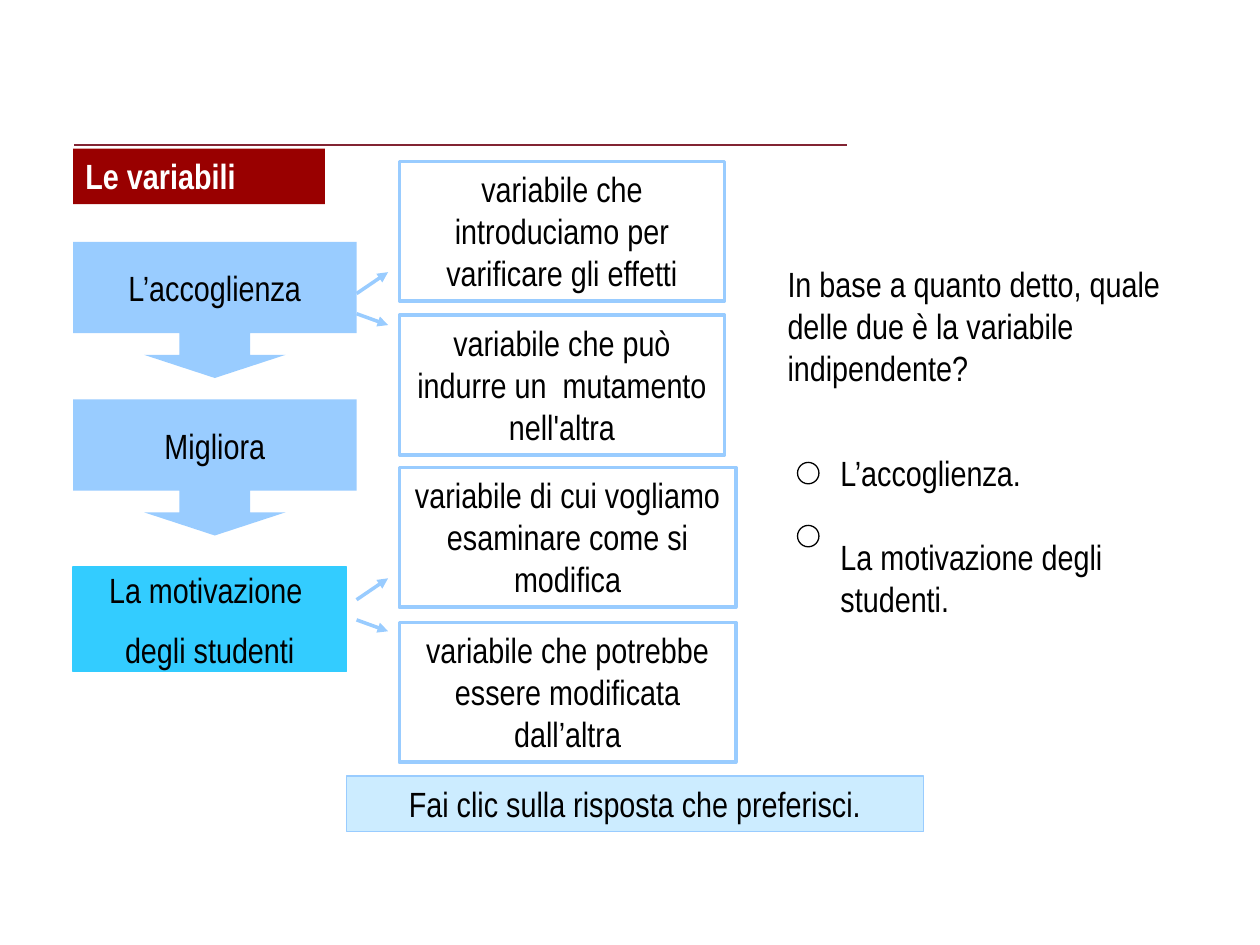
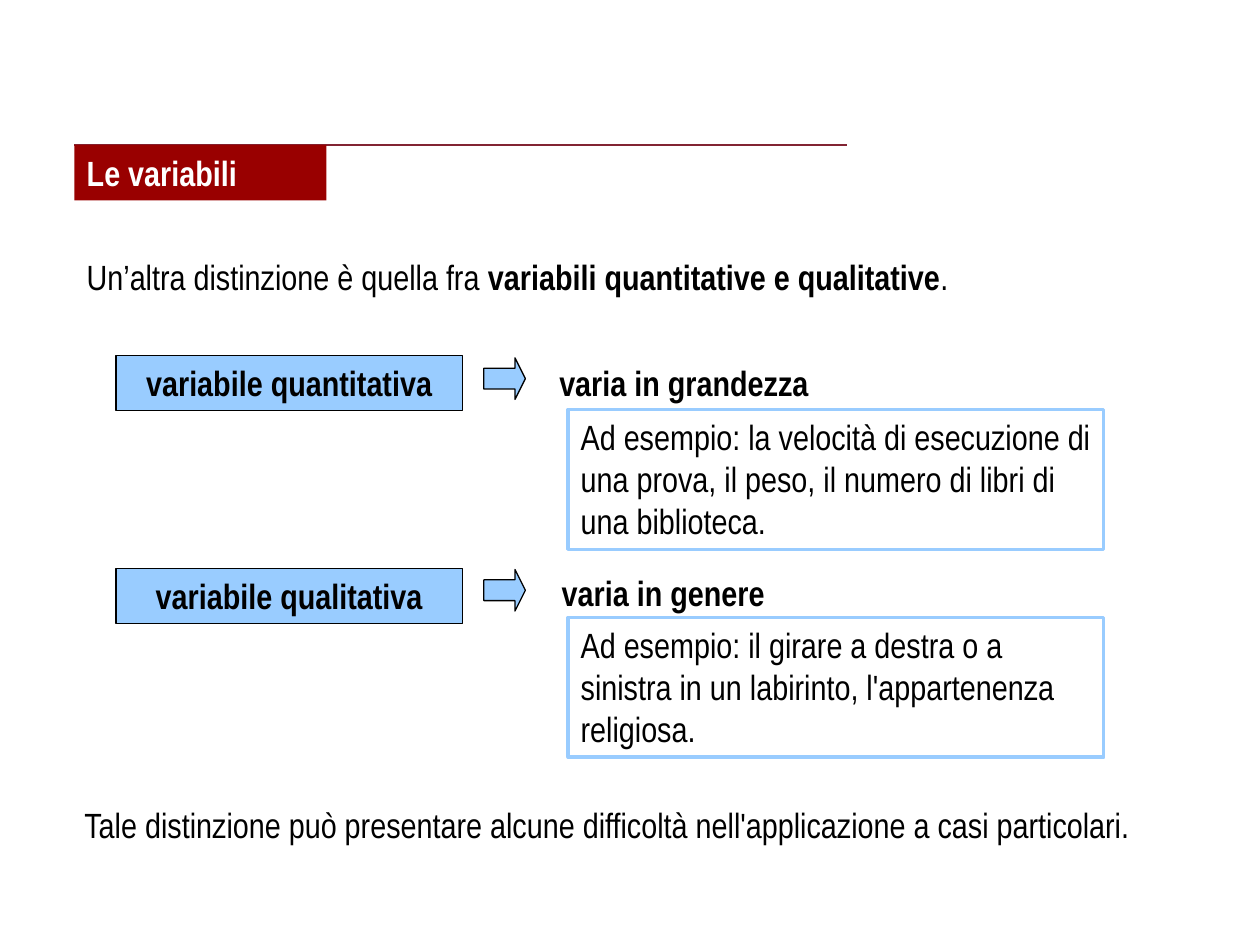
from lxml.etree import SubElement
from pptx import Presentation
from pptx.dml.color import RGBColor
from pptx.enum.shapes import MSO_CONNECTOR, MSO_SHAPE
from pptx.enum.text import MSO_ANCHOR, MSO_AUTO_SIZE, PP_ALIGN
from pptx.oxml.ns import qn
from pptx.util import Pt

EMU_PER_PX = 9144
FONT = "Arial Narrow"
FONT_SIZE = 20
BLACK = "000000"
WHITE = "FFFFFF"
RULE = "822433"
TITLE_FILL = "990000"
SKY = "99CCFF"
PALE_SKY = "CCECFF"
CYAN = "33CCFF"
PARAGRAPH_GAP = 10
ANSWER_GAP = 24


def px(length):
    return length * EMU_PER_PX


def color(hex_value):
    return RGBColor.from_string(hex_value)


def write_text(shape, paragraphs, font_color=BLACK, bold=False, align=PP_ALIGN.LEFT,
               gap=0, wrap=True, grow=True, inset=True):
    frame = shape.text_frame
    frame.word_wrap = wrap
    frame.auto_size = MSO_AUTO_SIZE.SHAPE_TO_FIT_TEXT if grow else MSO_AUTO_SIZE.NONE
    frame.vertical_anchor = MSO_ANCHOR.TOP if grow else MSO_ANCHOR.MIDDLE
    if not inset:
        frame.margin_left = frame.margin_top = frame.margin_right = frame.margin_bottom = 0
    for index, runs in enumerate(paragraphs):
        paragraph = frame.add_paragraph() if index else frame.paragraphs[0]
        paragraph.alignment = align
        if index:
            paragraph.space_before = Pt(gap)
        for text, emphasis in runs:
            run = paragraph.add_run()
            run.text = text
            run.font.name = FONT
            run.font.size = Pt(FONT_SIZE)
            run.font.bold = bold or emphasis
            run.font.color.rgb = color(font_color)


def plain(*texts):
    return [[(text, False)] for text in texts]


def add_text(slide, bounds, paragraphs, **style):
    text_box = slide.shapes.add_textbox(*map(px, bounds))
    write_text(text_box, paragraphs, **style)


def add_figure(slide, kind, bounds, fill=None, line=None, line_width=0.75, adjustments=()):
    shape = slide.shapes.add_shape(kind, *map(px, bounds))
    shape.shadow.inherit = False
    for index, value in enumerate(adjustments):
        shape.adjustments[index] = value
    if fill:
        shape.fill.solid()
        shape.fill.fore_color.rgb = color(fill)
    else:
        shape.fill.background()
    if line:
        shape.line.color.rgb = color(line)
        shape.line.width = Pt(line_width)
    else:
        shape.line.fill.background()
    return shape


def add_line(slide, start, end, line, width, arrow=False):
    connector = slide.shapes.add_connector(MSO_CONNECTOR.STRAIGHT, *map(px, start + end))
    connector.line.color.rgb = color(line)
    connector.line.width = Pt(width)
    if arrow:
        SubElement(connector.line._get_or_add_ln(), qn("a:tailEnd"), type="triangle")
    SubElement(connector._element.spPr, qn("a:effectLst"))


def add_header(slide, left, top):
    add_line(slide, (59, 115), (672, 115), RULE, 1.5)
    title = add_figure(slide, MSO_SHAPE.RECTANGLE, (left, top, 200, 44), TITLE_FILL)
    write_text(title, plain("Le variabili"), font_color=WHITE, bold=True)


def add_outlined_box(slide, bounds, text, align):
    box = add_figure(slide, MSO_SHAPE.RECTANGLE, bounds, line=SKY, line_width=2)
    write_text(box, plain(text), align=align)


def add_callout(slide, top, text):
    callout = add_figure(slide, MSO_SHAPE.DOWN_ARROW_CALLOUT, (58, top, 225, 108), SKY,
                         adjustments=(0.52, 0.52, 0.17, 0.67))
    write_text(callout, plain(text), align=PP_ALIGN.CENTER, wrap=False, grow=False)


def add_arrow_pair(slide, top):
    add_line(slide, (283, top), (308, top - 17), SKY, 2, arrow=True)
    add_line(slide, (283, top + 16), (308, top + 25), SKY, 2, arrow=True)


def add_variable_kind(slide, top, name, arrow_top, label_left, label_top, label,
                      example_top, example):
    box = add_figure(slide, MSO_SHAPE.RECTANGLE, (92, top, 275, 44), SKY, BLACK)
    write_text(box, plain(name), bold=True, align=PP_ALIGN.CENTER)
    add_figure(slide, MSO_SHAPE.RIGHT_ARROW, (384, arrow_top, 33, 33), SKY, BLACK,
               adjustments=(0.5, 0.25))
    add_text(slide, (label_left, label_top, 219, 44), plain(label), bold=True)
    add_outlined_box(slide, (451, example_top, 425, 111), example, PP_ALIGN.LEFT)


def build_question_slide(slide):
    add_header(slide, 58, 118)
    add_callout(slide, 192, "L’accoglienza")
    add_callout(slide, 317, "Migliora")
    outcome = add_figure(slide, MSO_SHAPE.RECTANGLE, (58, 450, 217, 83), CYAN, CYAN)
    write_text(outcome, plain("La motivazione ", "degli studenti"), align=PP_ALIGN.CENTER,
               gap=PARAGRAPH_GAP, wrap=False, grow=False)

    definitions = [
        (128, 258, "variabile che introduciamo per varificare gli effetti"),
        (250, 258, "variabile che può indurre un  mutamento nell'altra"),
        (371, 267, "variabile di cui vogliamo esaminare come si modifica"),
        (494, 267, "variabile che potrebbe essere modificata dall’altra"),
    ]
    for top, width, definition in definitions:
        add_outlined_box(slide, (317, top, width, 111), definition, PP_ALIGN.CENTER)
    for top in (233, 476):
        add_arrow_pair(slide, top)

    add_text(slide, (625, 208, 308, 101),
             plain("In base a quanto detto, quale delle due è la variabile indipendente?"),
             inset=False)
    for top in (367, 417):
        add_figure(slide, MSO_SHAPE.OVAL, (633, top, 17, 17), line=BLACK)
    add_text(slide, (667, 358, 258, 135),
             plain("L’accoglienza.", "La motivazione degli studenti."),
             gap=ANSWER_GAP, inset=False)
    hint = add_figure(slide, MSO_SHAPE.RECTANGLE, (275, 616, 458, 44), PALE_SKY, SKY)
    write_text(hint, plain("Fai clic sulla risposta che preferisci."), align=PP_ALIGN.CENTER)


def build_kinds_slide(slide):
    add_header(slide, 59, 115)
    add_text(slide, (59, 198, 714, 44), [[
        ("Un’altra distinzione è quella fra ", False),
        ("variabili quantitative e qualitative", True),
        (".", False),
    ]], wrap=False)
    add_variable_kind(
        slide, 282, "variabile quantitativa", 284, 434, 282, "varia in grandezza", 325,
        "Ad esempio: la velocità di esecuzione di una prova, il peso, "
        "il numero di libri di una biblioteca.")
    add_variable_kind(
        slide, 451, "variabile qualitativa", 452, 436, 449, "varia in genere", 490,
        "Ad esempio: il girare a destra o a sinistra in un labirinto, "
        "l'appartenenza religiosa.")
    add_text(slide, (67, 638, 917, 34),
             plain("Tale distinzione può presentare alcune difficoltà "
                   "nell'applicazione a casi particolari."), inset=False)


def main():
    presentation = Presentation()
    presentation.slide_width = px(1000)
    presentation.slide_height = px(750)
    blank_layout = presentation.slide_layouts[6]
    for build_slide in (build_question_slide, build_kinds_slide):
        build_slide(presentation.slides.add_slide(blank_layout))
    presentation.save("out.pptx")


if __name__ == "__main__":
    main()
